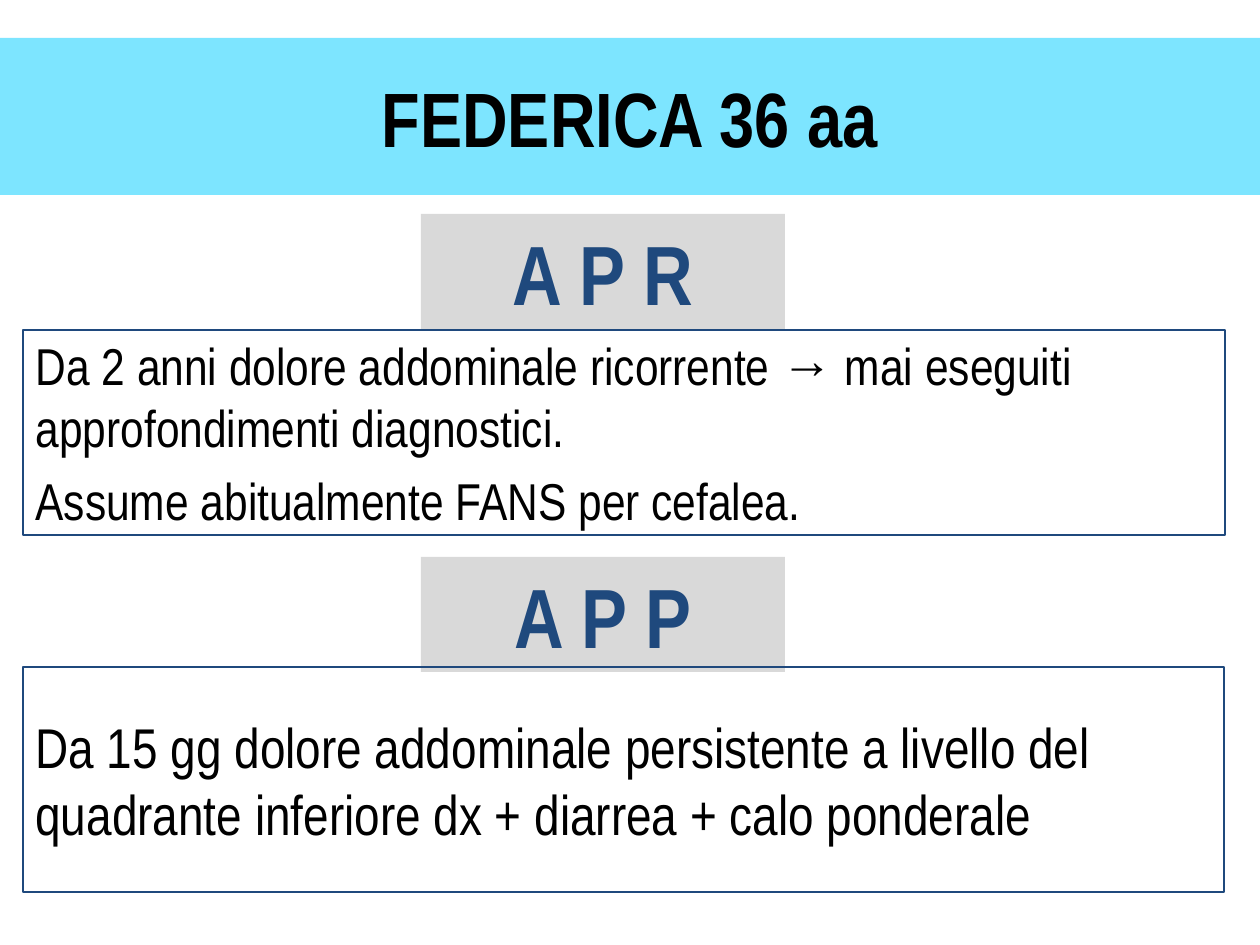
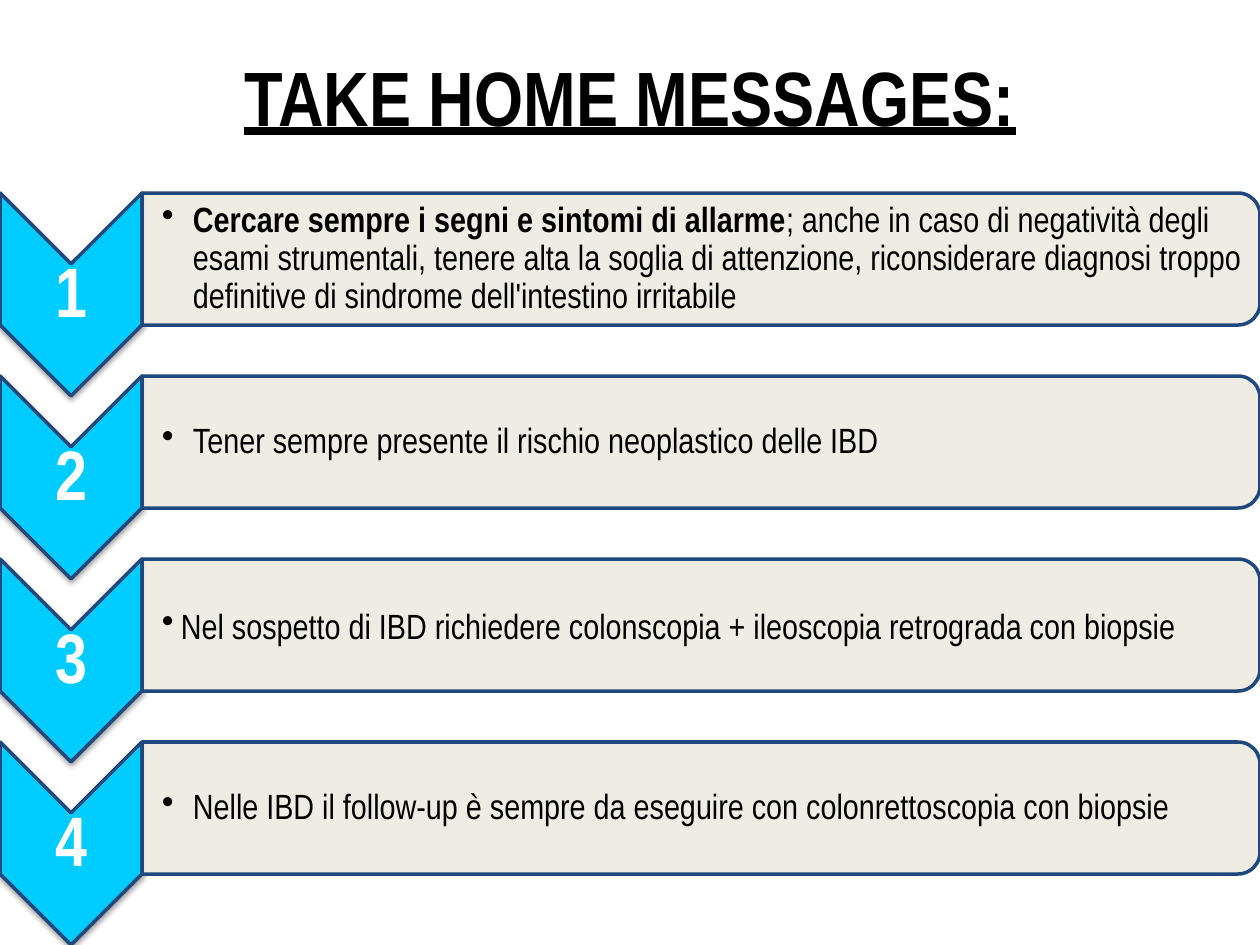
"""Build a clinical case slide and a slide of numbered take-home messages."""
import pptx
import pptx.dml.color
import pptx.enum.shapes
import pptx.enum.text
import pptx.oxml
import pptx.oxml.ns
import pptx.util

RGBColor = pptx.dml.color.RGBColor
MSO_SHAPE = pptx.enum.shapes.MSO_SHAPE
PP_ALIGN = pptx.enum.text.PP_ALIGN
BLACK = RGBColor(0x00, 0x00, 0x00)
WHITE = RGBColor(0xFF, 0xFF, 0xFF)
CYAN = RGBColor(0x00, 0xCC, 0xFF)
NAVY = RGBColor(0x1F, 0x49, 0x7D)
GREY = RGBColor(0xD9, 0xD9, 0xD9)
CREAM = RGBColor(0xEE, 0xEC, 0xE1)
FONT = "Arial Narrow"
PX_PER_INCH = 126
SLIDE_SIZE = (1260, 945)

CASE_TITLE = "FEDERICA 36 aa"
HISTORY = [
    "Da 2 anni dolore addominale ricorrente → mai eseguiti approfondimenti diagnostici.",
    "Assume abitualmente FANS per cefalea.",
]
PRESENT_ILLNESS = [
    "Da 15 gg dolore addominale persistente a livello del quadrante inferiore dx"
    " + diarrea + calo ponderale",
]
TAGS = [("A P R", 214), ("A P P", 557)]

MESSAGES_TITLE = "TAKE HOME MESSAGES:"
MESSAGES = [
    {"lead": "Cercare sempre i segni e sintomi di allarme",
     "text": "; anche in caso di negatività degli esami strumentali, tenere alta la soglia"
             " di attenzione, riconsiderare diagnosi troppo definitive di sindrome"
             " dell'intestino irritabile"},
    {"text": "Tener sempre presente il rischio neoplastico delle IBD"},
    {"text": "Nel sospetto di IBD richiedere colonscopia + ileoscopia retrograda con biopsie",
     "hanging": 19, "spacing": 1.0},
    {"text": "Nelle IBD il follow-up è sempre da eseguire con colonrettoscopia con biopsie"},
]
ROW_TOP, ROW_PITCH = 193, 183
CHEVRON_WIDTH, CHEVRON_HEIGHT = 142, 203
BAR_HEIGHT = 132


def px(length):
    return pptx.util.Emu(round(length * 914400 / PX_PER_INCH))


def place(shape, left, top, width, height):
    shape.left, shape.top, shape.width, shape.height = map(px, (left, top, width, height))


def append_xml(parent, tag, content="", attributes=""):
    namespace = pptx.oxml.ns.nsdecls("a")
    parent.append(pptx.oxml.parse_xml(f"<a:{tag} {namespace} {attributes}>{content}</a:{tag}>"))


def paint(shape, fill=None, opacity=100, line=None, line_width=0.75):
    if fill is None:
        shape.fill.background()
    else:
        shape.fill.solid()
        shape.fill.fore_color.rgb = fill
        if opacity < 100:
            color = shape.fill._xPr.find(".//" + pptx.oxml.ns.qn("a:srgbClr"))
            append_xml(color, "alpha", attributes=f'val="{opacity * 1000}"')
    if line is None:
        shape.line.fill.background()
    else:
        shape.line.color.rgb = line
        shape.line.width = pptx.util.Pt(line_width)


def add_painted_shape(slide, kind, box, **paint_options):
    shape = slide.shapes.add_shape(kind, *map(px, box))
    shape.shadow.inherit = False
    paint(shape, **paint_options)
    return shape


def add_turned_shape(slide, kind, box, **paint_options):
    left, top, width, height = box
    shift = (width - height) / 2
    turned_box = (left + shift, top - shift, height, width)
    shape = add_painted_shape(slide, kind, turned_box, **paint_options)
    shape.rotation = 90
    return shape


def prepare_frame(shape, insets=None):
    frame = shape.text_frame
    frame.word_wrap = True
    frame.auto_size = pptx.enum.text.MSO_AUTO_SIZE.NONE
    frame.vertical_anchor = pptx.enum.text.MSO_ANCHOR.MIDDLE
    if insets:
        (frame.margin_left, frame.margin_top,
         frame.margin_right, frame.margin_bottom) = map(px, insets)
    return frame


def add_run(paragraph, text, size, color=BLACK, bold=False, underline=None):
    run = paragraph.add_run()
    run.text = text
    run.font.name = FONT
    run.font.size = pptx.util.Pt(size)
    run.font.color.rgb = color
    run.font.bold = bold
    run.font.underline = underline


def write_centred(shape, text, size, color=BLACK, underline=None, insets=None):
    paragraph = prepare_frame(shape, insets).paragraphs[0]
    paragraph.alignment = PP_ALIGN.CENTER
    add_run(paragraph, text, size, color, True, underline)
    return paragraph


def write_plain(shape, lines, size):
    frame = prepare_frame(shape)
    for index, line in enumerate(lines):
        paragraph = frame.add_paragraph() if index else frame.paragraphs[0]
        paragraph.alignment = PP_ALIGN.LEFT
        paragraph.space_before = pptx.util.Pt(size * 0.2)
        properties = paragraph._p.get_or_add_pPr()
        properties.set("marL", "0")
        properties.set("indent", "0")
        append_xml(properties, "buNone")
        add_run(paragraph, line, size)


def write_message(shape, message):
    paragraph = prepare_frame(shape, (20, 1, 1, 1)).paragraphs[0]
    paragraph.line_spacing = message.get("spacing", 0.9)
    hanging = px(message.get("hanging", 31))
    properties = paragraph._p.get_or_add_pPr()
    properties.set("marL", str(hanging))
    properties.set("indent", str(-hanging))
    append_xml(properties, "buChar", attributes='char="•"')
    if "lead" in message:
        add_run(paragraph, message["lead"], 20, bold=True)
    add_run(paragraph, message["text"], 20)


def add_case_slide(presentation):
    slide = presentation.slides.add_slide(presentation.slide_layouts[1])
    title, history = slide.placeholders
    place(title, 0, 38, SLIDE_SIZE[0], 157)
    paint(title, fill=CYAN, opacity=51)
    write_centred(title, CASE_TITLE, 44)
    place(history, 23, 330, 1202, 205)
    paint(history, line=NAVY)
    write_plain(history, HISTORY, 29.6)
    for label, top in TAGS:
        tag = add_painted_shape(slide, MSO_SHAPE.RECTANGLE, (421, top, 364, 115), fill=GREY)
        write_centred(tag, label, 48, NAVY)
    illness = add_painted_shape(slide, MSO_SHAPE.RECTANGLE, (23, 667, 1201, 225), line=NAVY)
    write_plain(illness, PRESENT_ILLNESS, 32)


def add_chevron(slide, number, top):
    chevron = add_turned_shape(
        slide, MSO_SHAPE.CHEVRON, (0, top, CHEVRON_WIDTH, CHEVRON_HEIGHT),
        fill=CYAN, line=NAVY, line_width=2)
    effects = chevron._element.spPr.find(pptx.oxml.ns.qn("a:effectLst"))
    append_xml(effects, "outerShdw",
               '<a:srgbClr val="000000"><a:alpha val="38000"/></a:srgbClr>',
               'blurRad="40000" dist="20000" dir="5400000" rotWithShape="0"')
    label = slide.shapes.add_textbox(*map(px, (0, top + 71, CHEVRON_WIDTH, 61)))
    paragraph = write_centred(label, str(number), 40, WHITE, insets=(4, 4, 4, 4))
    paragraph.line_spacing = 0.9


def add_message_bar(slide, message, top):
    width = SLIDE_SIZE[0] - CHEVRON_WIDTH
    add_turned_shape(
        slide, MSO_SHAPE.ROUND_2_SAME_RECTANGLE, (CHEVRON_WIDTH, top, width, BAR_HEIGHT),
        fill=CREAM, opacity=90, line=NAVY, line_width=2)
    text_box = slide.shapes.add_textbox(
        *map(px, (CHEVRON_WIDTH, top + 7, width - 7, BAR_HEIGHT - 14)))
    write_message(text_box, message)


def add_messages_slide(presentation):
    slide = presentation.slides.add_slide(presentation.slide_layouts[5])
    title = slide.shapes.title
    place(title, 63, 0, 1134, 192)
    write_centred(title, MESSAGES_TITLE, 44, underline=True)
    for index, message in enumerate(MESSAGES):
        top = ROW_TOP + index * ROW_PITCH
        add_chevron(slide, index + 1, top)
        add_message_bar(slide, message, top)


def main():
    presentation = pptx.Presentation()
    presentation.slide_width, presentation.slide_height = map(px, SLIDE_SIZE)
    add_case_slide(presentation)
    add_messages_slide(presentation)
    presentation.save("out.pptx")


if __name__ == "__main__":
    main()
